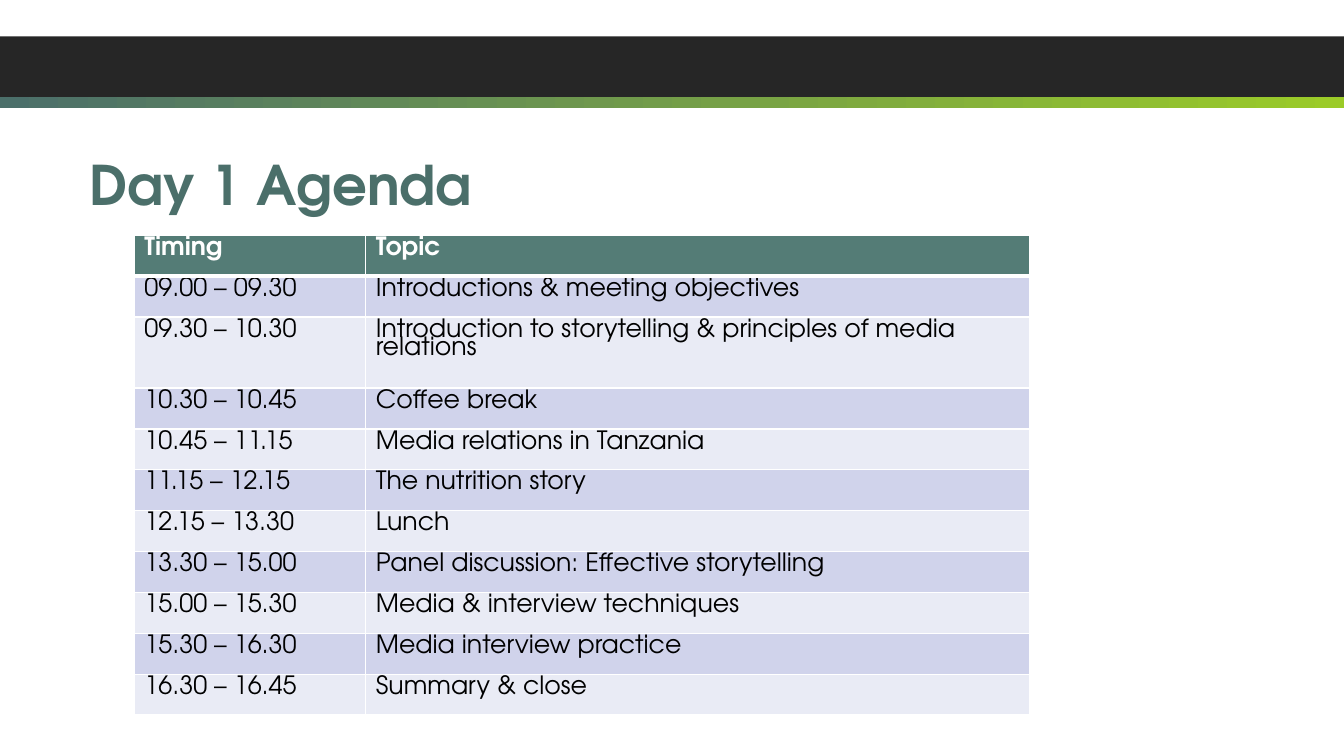
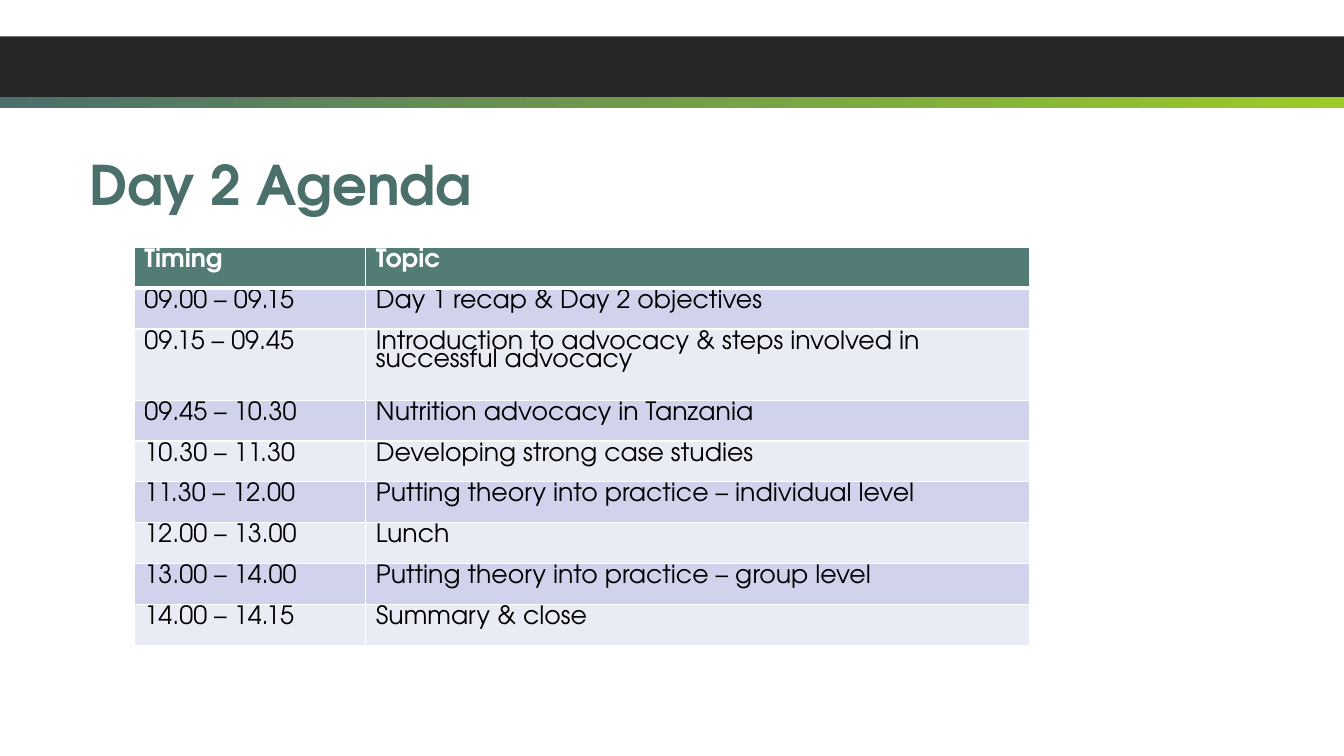
from dataclasses import dataclass

import pptx
import pptx.dml.color
import pptx.enum.shapes
import pptx.enum.text
import pptx.oxml
import pptx.oxml.ns
import pptx.util
from lxml import etree

Pt = pptx.util.Pt

FONT = "TeX Gyre Adventor"
WHITE, BLACK, CHARCOAL = "FFFFFF", "000000", "262626"
TEAL, LIME = "4B6F6A", "9BCB28"
HEADER_FILL = "547C76"
ROW_FILLS = ("D0D3EB", "E9EBF5")

SLIDE_W, SLIDE_H = 960, 540
TABLE_LEFT = 96
COL_WIDTHS = (165.3, 474.5)
ROW_H, TALL_ROW_H = 29.2, 50.8
ONE_LINE_CHARS = 50
THIN, THICK = 1, 3


@dataclass(frozen=True)
class Band:
    top: float
    height: float
    colors: tuple[str, ...]


@dataclass(frozen=True)
class Session:
    timing: str
    topic: str


@dataclass(frozen=True)
class Agenda:
    title: str
    table_top: float
    sessions: tuple[Session, ...]


BANDS = (
    Band(25.9, 43.4, (CHARCOAL,)),
    Band(69.3, 7.8, (TEAL, LIME)),
)

AGENDAS = (
    Agenda("Day 1 Agenda", 168, (
        Session("09.00 – 09.30", "Introductions & meeting objectives"),
        Session("09.30 – 10.30", "Introduction to storytelling & principles of media relations"),
        Session("10.30 – 10.45", "Coffee break"),
        Session("10.45 – 11.15", "Media relations in Tanzania"),
        Session("11.15 – 12.15", "The nutrition story"),
        Session("12.15 – 13.30", "Lunch"),
        Session("13.30 – 15.00", "Panel discussion: Effective storytelling"),
        Session("15.00 – 15.30", "Media & interview techniques"),
        Session("15.30 – 16.30", "Media interview practice"),
        Session("16.30 – 16.45", "Summary & close"),
    )),
    Agenda("Day 2 Agenda", 176.6, (
        Session("09.00 – 09.15", "Day 1 recap & Day 2 objectives"),
        Session("09.15 – 09.45", "Introduction to advocacy & steps involved in successful advocacy"),
        Session("09.45 – 10.30", "Nutrition advocacy in Tanzania"),
        Session("10.30 – 11.30", "Developing strong case studies"),
        Session("11.30 – 12.00", "Putting theory into practice – individual level"),
        Session("12.00 – 13.00", "Lunch"),
        Session("13.00 – 14.00", "Putting theory into practice – group level"),
        Session("14.00 – 14.15", "Summary & close"),
    )),
)


def rgb(color: str) -> pptx.dml.color.RGBColor:
    return pptx.dml.color.RGBColor.from_string(color)


def write(tf, text: str, *, size: float = 18, color: str = BLACK,
          bold: bool = False, spacing: float = 1.0) -> None:
    p = tf.paragraphs[0]
    p.alignment = pptx.enum.text.PP_ALIGN.LEFT
    p.line_spacing = spacing
    r = p.add_run()
    r.text = text
    r.font.name = FONT
    r.font.size = Pt(size)
    r.font.bold = bold
    r.font.color.rgb = rgb(color)


def draw_band(s, band: Band) -> None:
    sp = s.shapes.add_shape(pptx.enum.shapes.MSO_SHAPE.RECTANGLE,
                            0, Pt(band.top), Pt(SLIDE_W), Pt(band.height))
    sp.shadow.inherit = False
    sp.line.fill.background()
    if len(band.colors) == 1:
        sp.fill.solid()
        sp.fill.fore_color.rgb = rgb(band.colors[0])
        return
    sp.fill.gradient()
    sp.fill.gradient_angle = 0
    for stop, color, position in zip(sp.fill.gradient_stops, band.colors, (0, 1)):
        stop.color.rgb = rgb(color)
        stop.position = position


def draw_title(s, text: str) -> None:
    sp = s.shapes.title
    sp.left, sp.top, sp.width, sp.height = Pt(56.9), Pt(109.4), Pt(884.2), Pt(146.9)
    tf = sp.text_frame
    tf.word_wrap = True
    tf.auto_size = pptx.enum.text.MSO_AUTO_SIZE.NONE
    tf.vertical_anchor = pptx.enum.text.MSO_ANCHOR.TOP
    write(tf, text, size=39, color=TEAL, bold=True, spacing=0.9)


def set_borders(cell, top: float, bottom: float) -> None:
    """Give the cell white edges; call before filling, as the schema puts lines first."""
    tc_pr = cell._tc.get_or_add_tcPr()
    for side, width in (("L", THIN), ("R", THIN), ("T", top), ("B", bottom)):
        ln = etree.SubElement(tc_pr, pptx.oxml.ns.qn(f"a:ln{side}"), w=str(int(Pt(width))))
        fill = etree.SubElement(ln, pptx.oxml.ns.qn("a:solidFill"))
        etree.SubElement(fill, pptx.oxml.ns.qn("a:srgbClr"), val=WHITE)


def draw_table(s, agenda: Agenda) -> None:
    rows = (Session("Timing", "Topic"), *agenda.sessions)
    heights = [TALL_ROW_H if len(row.topic) > ONE_LINE_CHARS else ROW_H for row in rows]
    table = s.shapes.add_table(len(rows), len(COL_WIDTHS), Pt(TABLE_LEFT), Pt(agenda.table_top),
                               Pt(sum(COL_WIDTHS)), Pt(sum(heights))).table
    for column, width in zip(table.columns, COL_WIDTHS):
        column.width = Pt(width)
    for i, (row, height) in enumerate(zip(rows, heights)):
        table.rows[i].height = Pt(height)
        header = i == 0
        for j, text in enumerate((row.timing, row.topic)):
            cell = table.cell(i, j)
            set_borders(cell, top=THICK if i == 1 else THIN, bottom=THICK if header else THIN)
            cell.fill.solid()
            cell.fill.fore_color.rgb = rgb(HEADER_FILL if header else ROW_FILLS[(i - 1) % 2])
            write(cell.text_frame, text, color=WHITE if header else BLACK,
                  bold=header, spacing=0.8)


def main() -> None:
    prs = pptx.Presentation()
    prs.slide_width, prs.slide_height = Pt(SLIDE_W), Pt(SLIDE_H)
    title_only = prs.slide_layouts[5]
    for agenda in AGENDAS:
        s = prs.slides.add_slide(title_only)
        for band in BANDS:
            draw_band(s, band)
        draw_title(s, agenda.title)
        draw_table(s, agenda)
    prs.save("out.pptx")


if __name__ == "__main__":
    main()
